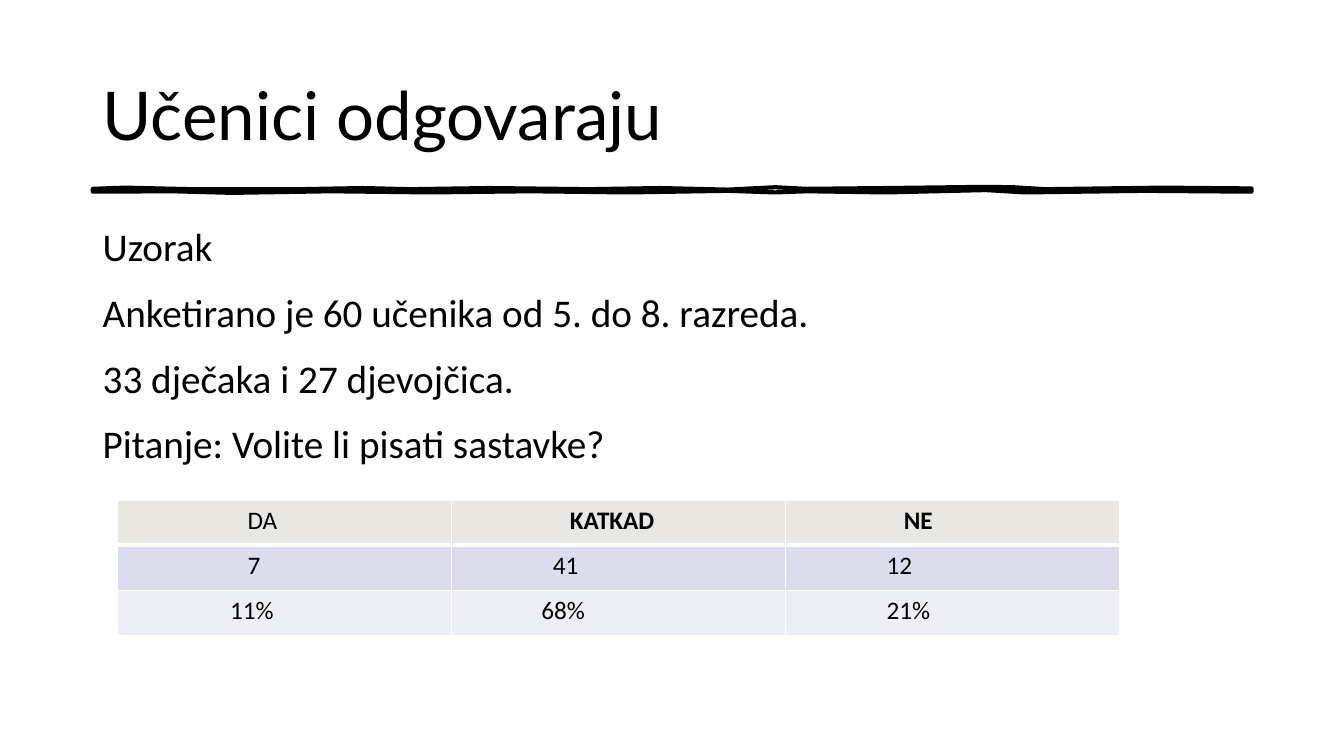
from lxml.etree import SubElement
from pptx import Presentation
from pptx.dml.color import RGBColor
from pptx.enum.text import MSO_ANCHOR
from pptx.oxml.ns import qn
from pptx.util import Cm, Pt

BLACK = "000000"
WHITE = "FFFFFF"
STATEMENTS = [
    "Uzorak",
    "Anketirano je 60 učenika od 5. do 8. razreda.",
    "33 dječaka i 27 djevojčica.",
    "Pitanje: Volite li pisati sastavke?",
]
ANSWERS = [
    ("E8E7E2", [("DA", 3.02, False), ("KATKAD", 2.73, True), ("NE", 2.73, True)]),
    ("DBDDEC", [("7", 3.02, False), ("41", 2.3, False), ("12", 2.3, False)]),
    ("EEEFF6", [("11%", 2.58, False), ("68%", 2.01, False), ("21%", 2.3, False)]),
]
UPPER_EDGE = [(0, 0.01), (0.8, -0.02), (2.5, 0.02), (5.2, 0.02), (6.8, -0.01),
              (8, 0.02), (10, -0.01), (12.5, 0.02), (14.3, -0.01), (16, 0.03),
              (17.2, -0.03), (18, 0.01), (20, -0.01), (22.5, -0.04),
              (23.2, -0.03), (24, 0.02), (27, -0.02), (29.2, 0)]
LOWER_EDGE = [(29.2, 0.08), (26.5, 0.06), (23.5, 0.1), (22.5, 0.04), (20, 0.1),
              (18, 0.07), (17.2, 0.1), (16, 0.06), (13.5, 0.1), (11, 0.07),
              (8.5, 0.1), (6, 0.07), (3.5, 0.11), (2, 0.07), (0, 0.08)]


def color(value):
    return RGBColor.from_string(value)


def add_span(para, text, font, size, bold=False):
    span = para.add_run()
    span.text = text
    span.font.name = font
    span.font.size = Pt(size)
    span.font.bold = bold
    span.font.color.rgb = color(BLACK)


def add_text_box(page, left, top, width, height, anchor):
    box = page.shapes.add_textbox(Cm(left), Cm(top), Cm(width), Cm(height))
    box.text_frame.word_wrap = True
    box.text_frame.vertical_anchor = anchor
    return box.text_frame


def add_title(page, left, top, width, height):
    frame = add_text_box(page, left, top, width, height, MSO_ANCHOR.MIDDLE)
    add_span(frame.paragraphs[0], "Učenici odgovaraju", "Lato", 48)


def add_brush_line(page, left, top):
    points = [(Cm(left + x), Cm(top + y)) for x, y in UPPER_EDGE + LOWER_EDGE]
    builder = page.shapes.build_freeform(*points[0])
    builder.add_line_segments(points[1:], close=True)
    stroke = builder.convert_to_shape()
    stroke.shadow.inherit = False
    stroke.fill.background()
    stroke.line.color.rgb = color(BLACK)
    stroke.line.width = Pt(3)
    SubElement(stroke.line._get_or_add_ln(), qn("a:round"))


def add_statements(page, left, top, width, height):
    frame = add_text_box(page, left, top, width, height, MSO_ANCHOR.TOP)
    for index, statement in enumerate(STATEMENTS):
        para = frame.add_paragraph() if index else frame.paragraphs[0]
        para.line_spacing = 1.1
        para.space_before = Pt(10)
        add_span(para, statement, "Calibri", 28)


def add_border(cell, side, width):
    line = SubElement(cell._tc.get_or_add_tcPr(), qn("a:ln" + side), w=str(Pt(width)))
    fill = SubElement(line, qn("a:solidFill"))
    SubElement(fill, qn("a:srgbClr"), val=WHITE)


def add_answers(page, left, top, width, height):
    rows, columns = len(ANSWERS), len(ANSWERS[0][1])
    table = page.shapes.add_table(
        rows, columns, Cm(left), Cm(top), Cm(width), Cm(height)).table
    table.first_row = False
    table.horz_banding = False
    for row, (fill, entries) in enumerate(ANSWERS):
        for column, (text, indent, bold) in enumerate(entries):
            cell = table.cell(row, column)
            cell.margin_left = Cm(0.25 + indent)
            add_span(cell.text_frame.paragraphs[0], text, "Calibri", 18, bold)
            for side in "LRTB":
                under_header = (row, side) in [(0, "B"), (1, "T")]
                add_border(cell, side, 3 if under_header else 1)
            cell.fill.solid()
            cell.fill.fore_color.rgb = color(fill)


def main():
    deck = Presentation()
    deck.slide_width = Cm(33.87)
    deck.slide_height = Cm(19.05)
    page = deck.slides.add_slide(deck.slide_layouts[6])
    add_brush_line(page, 2.34, 4.75)
    add_title(page, 2.34, 1.02, 29.2, 3.68)
    add_statements(page, 2.34, 5.36, 29.2, 11.8)
    add_answers(page, 2.97, 12.6, 25.24, 3.42)
    deck.save("out.pptx")


if __name__ == "__main__":
    main()
